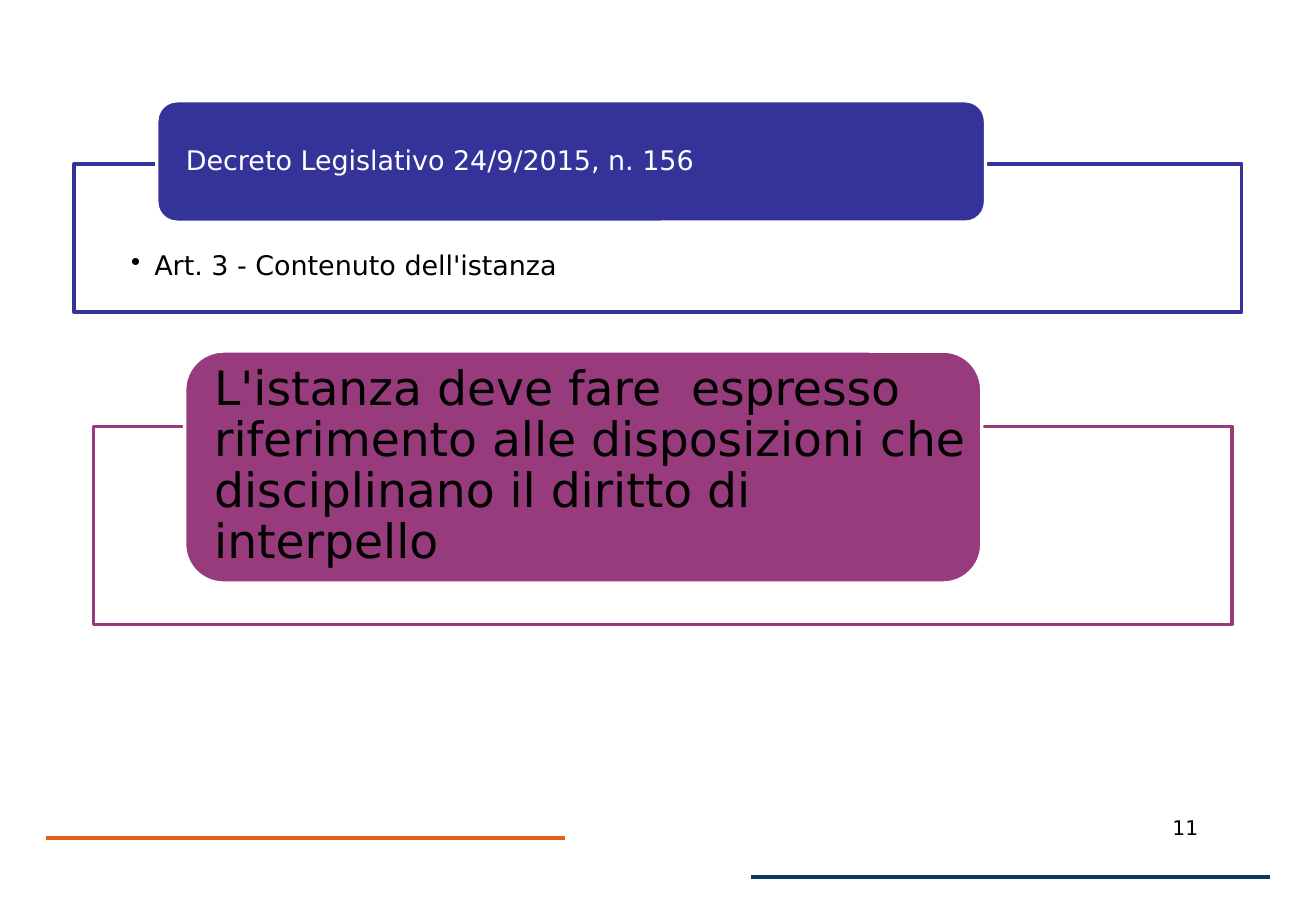
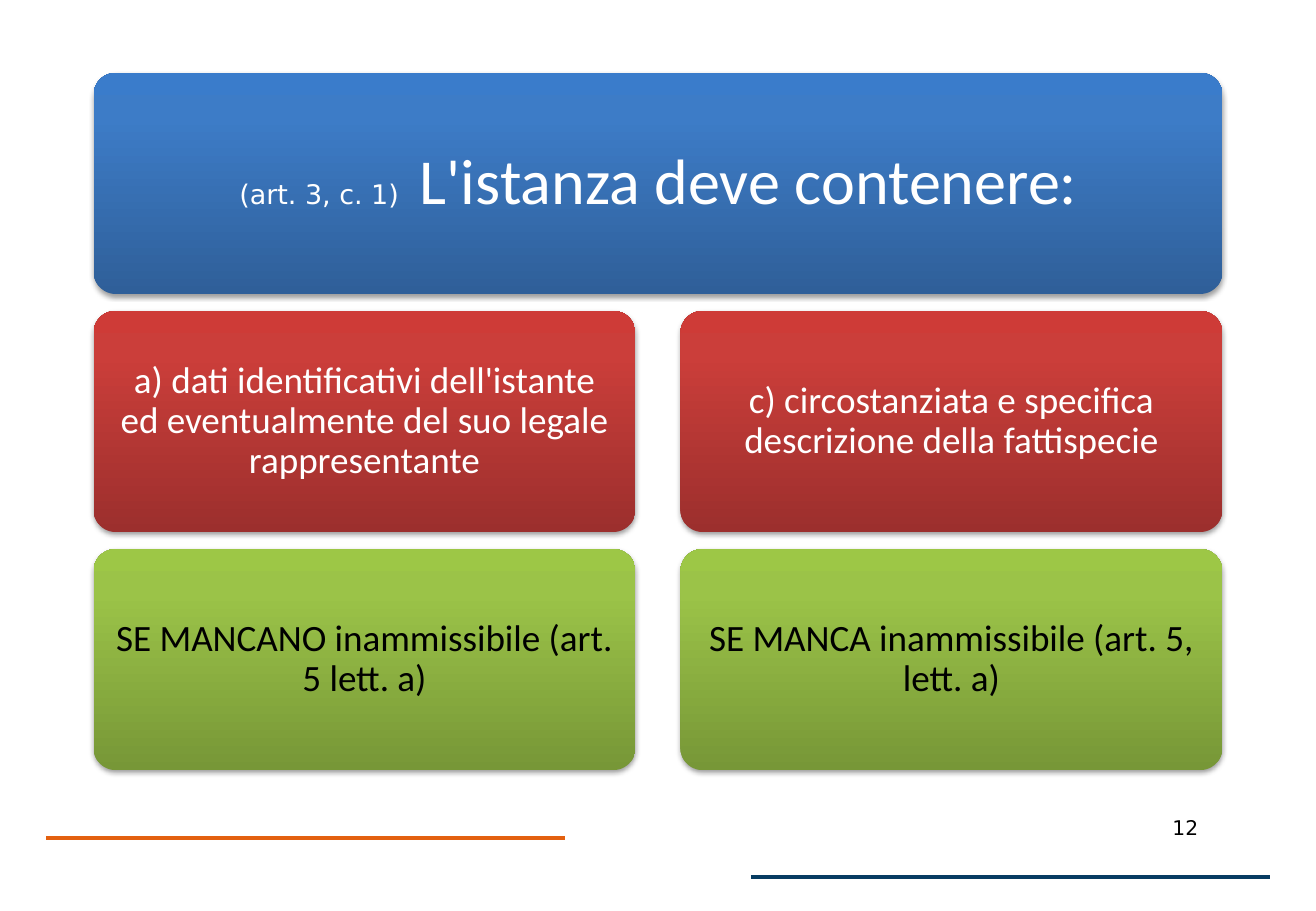
from lxml.etree import SubElement
from pptx import Presentation
from pptx.dml.color import RGBColor
from pptx.enum.shapes import MSO_CONNECTOR, MSO_SHAPE
from pptx.enum.text import MSO_ANCHOR, MSO_AUTO_SIZE, PP_ALIGN
from pptx.oxml.ns import qn
from pptx.util import Inches, Pt

# Shared style
SANS, HUMANIST = "DejaVu Sans", "Calibri"
WHITE, BLACK, INDIGO, PLUM = "FFFFFF", "000000", "333399", "983B7C"
FOOTER_LINES = [(0.38, 6.9, "E3600F"), (6.18, 7.22, "073C62")]
FOOTER_LENGTH = 4.27
GRADIENT_STOPS = (0, 80, 100)
BLUE = ("2F5F99", "3D7CC7", "3A7CCB")
RED = ("9C2F2D", "CB3E3A", "CE3B37")
GREEN = ("779737", "9BC348", "9DC746")

# Content: runs are (text, size, font)
DECREE = [("Decreto Legislativo 24/9/2015, n. 156", 16, SANS)]
ARTICLE = [("Art. 3 - Contenuto dell'istanza", 16, SANS)]
REQUIREMENT = [("L'istanza deve fare  espresso riferimento alle disposizioni che "
                "disciplinano il diritto di interpello", 28, SANS)]
MUST_CONTAIN = [("(art. 3, c. 1)", 16, SANS), (" ", 39, SANS),
                ("L'istanza deve contenere:", 38, HUMANIST)]
CARD_ROWS = [
    (RED, WHITE, ["a) dati identificativi dell'istante ed eventualmente del suo legale rappresentante",
                  "c) circostanziata e specifica descrizione della fattispecie"]),
    (GREEN, BLACK, ["SE MANCANO inammissibile (art. 5 lett. a)",
                    "SE MANCA inammissibile (art. 5, lett. a)"]),
]

# Card grid
GRID_LEFT, GRID_TOP = 0.77, 0.6
CARD_W, CARD_H, COL_GAP, ROW_GAP = 4.46, 1.82, 0.37, 0.14


def rgb(code):
    return RGBColor.from_string(code)


def box(*lengths):
    return [Inches(n) for n in lengths]


def write(sp, runs, color, align=PP_ALIGN.LEFT, anchor=MSO_ANCHOR.MIDDLE,
          insets=(0, 0, 0, 0), spacing=0.9, bullet=False):
    tf = sp.text_frame
    tf.word_wrap, tf.auto_size, tf.vertical_anchor = True, MSO_AUTO_SIZE.NONE, anchor
    tf.margin_left, tf.margin_top, tf.margin_right, tf.margin_bottom = box(*insets)
    p = tf.paragraphs[0]
    p.alignment, p.line_spacing = align, spacing
    if bullet:
        pPr = p._p.get_or_add_pPr()
        pPr.set("marL", str(Inches(0.19)))
        pPr.set("indent", str(-Inches(0.19)))
        SubElement(pPr, qn("a:buChar")).set("char", "•")
    for text, size, font in runs:
        r = p.add_run()
        r.text = text
        r.font.size, r.font.name, r.font.color.rgb = Pt(size), font, rgb(color)


def panel(slide, kind, place, fill, line):
    sp = slide.shapes.add_shape(kind, *box(*place))
    sp.shadow.inherit = False
    sp.fill.solid()
    sp.fill.fore_color.rgb = rgb(fill)
    sp.line.color.rgb = rgb(line)
    sp.line.width = Pt(2)
    return sp


def card(slide, row, col, span, colors):
    left = GRID_LEFT + col * (CARD_W + COL_GAP)
    top = GRID_TOP + row * (CARD_H + ROW_GAP)
    width = span * CARD_W + (span - 1) * COL_GAP
    sp = slide.shapes.add_shape(MSO_SHAPE.ROUNDED_RECTANGLE, *box(left, top, width, CARD_H))
    sp.adjustments[0] = 0.1
    sp.line.fill.background()
    # Gradient running upwards
    sp.fill.gradient()
    sp.fill.gradient_angle = 90
    stops = sp._element.spPr.find(".//" + qn("a:gsLst"))
    stops.clear()
    for pos, color in zip(GRADIENT_STOPS, colors):
        gs = SubElement(stops, qn("a:gs"), pos=str(pos * 1000))
        SubElement(gs, qn("a:srgbClr"), val=color)
    # Soft shadow below
    sp.shadow.inherit = False
    effects = sp._element.spPr.find(qn("a:effectLst"))
    shadow = SubElement(effects, qn("a:outerShdw"), blurRad=str(Pt(3.1)), dist=str(Pt(1.6)),
                        dir="5400000", rotWithShape="0")
    tint = SubElement(shadow, qn("a:srgbClr"), val=BLACK)
    SubElement(tint, qn("a:alpha"), val="38000")
    return sp


def title(slide, place, runs, **style):
    sp = slide.shapes.title
    sp.left, sp.top, sp.width, sp.height = box(*place)
    slide.shapes._spTree.append(sp._element)  # bring in front of its panel
    write(sp, runs, WHITE, **style)


def new_slide(prs, number):
    slide = prs.slides.add_slide(prs.slide_layouts[5])
    for left, y, color in FOOTER_LINES:
        line = slide.shapes.add_connector(MSO_CONNECTOR.STRAIGHT,
                                          *box(left, y, left + FOOTER_LENGTH, y))
        line.line.color.rgb = rgb(color)
        line.line.width = Pt(2)
        SubElement(line._element.spPr, qn("a:effectLst"))
    sp = slide.shapes.add_textbox(*box(9.28, 6.66, 0.95, 0.39))
    write(sp, [(str(number), 12, SANS)], BLACK, PP_ALIGN.CENTER, MSO_ANCHOR.TOP,
          (0.1, 0.05, 0.1, 0.05), 1.0)
    return slide


def decree_slide(prs):
    slide = new_slide(prs, 11)
    frame = panel(slide, MSO_SHAPE.RECTANGLE, (0.61, 1.35, 9.61, 1.22), WHITE, INDIGO)
    write(frame, ARTICLE, BLACK, anchor=MSO_ANCHOR.TOP,
          insets=(0.47, 0.73, 0.47, 0.12), bullet=True)
    panel(slide, MSO_SHAPE.ROUNDED_RECTANGLE, (1.29, 0.83, 6.82, 1), INDIGO, WHITE)
    title(slide, (1.37, 0.88, 6.65, 0.91), DECREE, insets=(0.16, 0, 0.16, 0))

    panel(slide, MSO_SHAPE.RECTANGLE, (0.77, 3.51, 9.37, 1.63), WHITE, PLUM)
    label = panel(slide, MSO_SHAPE.ROUNDED_RECTANGLE, (1.52, 2.89, 6.56, 1.91), PLUM, WHITE)
    write(label, REQUIREMENT, BLACK, insets=(0.15, 0, 0, 0))


def contents_slide(prs):
    slide = new_slide(prs, 12)
    card(slide, 0, 0, 2, BLUE)
    title(slide, (0.84, 0.65, 9.16, 1.71), MUST_CONTAIN,
          align=PP_ALIGN.CENTER, insets=(0.07,) * 4)
    for row, (colors, ink, texts) in enumerate(CARD_ROWS, start=1):
        for col, text in enumerate(texts):
            sp = card(slide, row, col, 1, colors)
            write(sp, [(text, 22, HUMANIST)], ink, PP_ALIGN.CENTER, insets=(0.11,) * 4)


def main():
    prs = Presentation()
    prs.slide_width, prs.slide_height = box(10.83, 7.5)
    decree_slide(prs)
    contents_slide(prs)
    prs.save("out.pptx")


if __name__ == "__main__":
    main()
